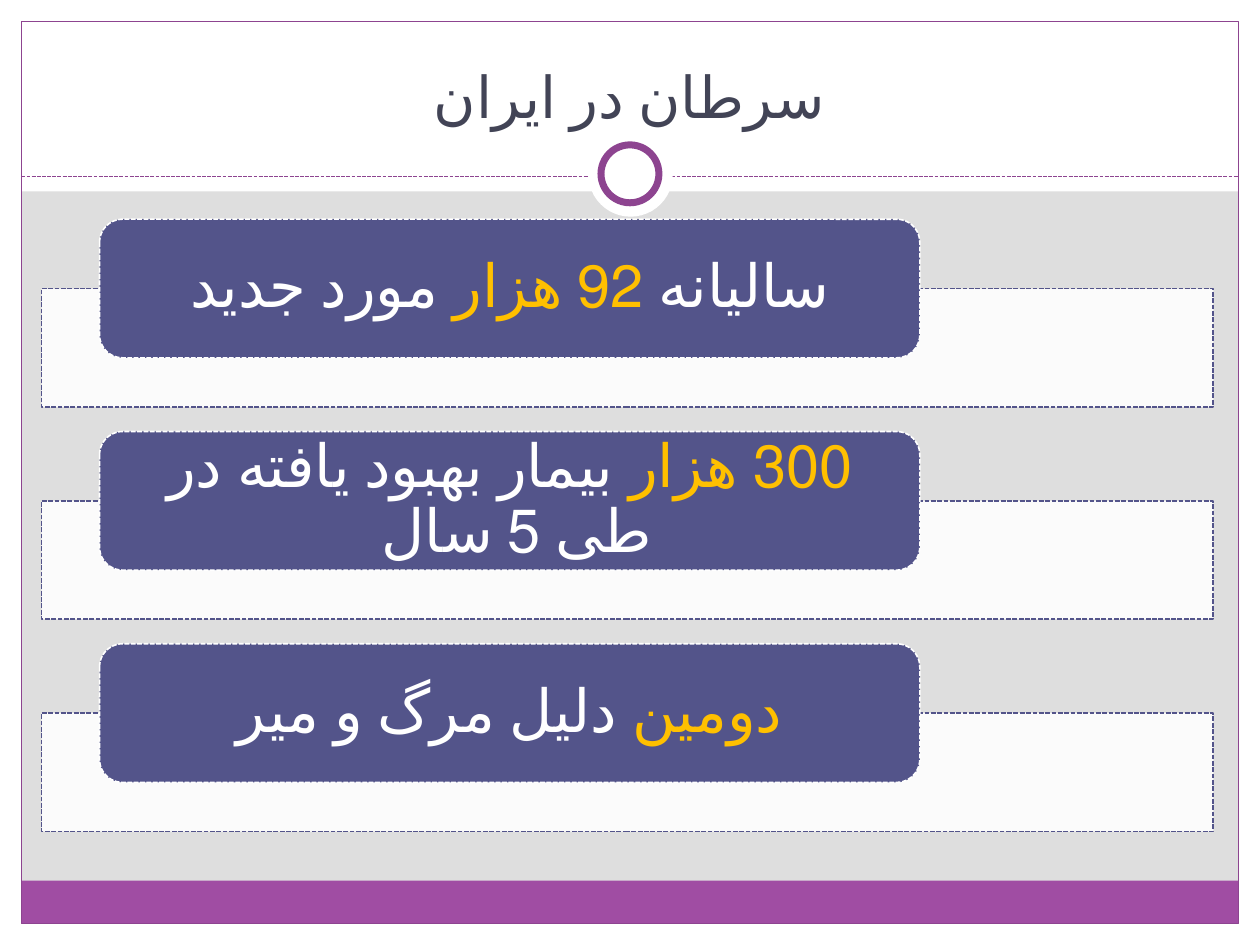
"""Build a slide with three statements about cancer in Iran."""
from pptx import Presentation
from pptx.dml.color import RGBColor
from pptx.enum.dml import MSO_LINE
from pptx.enum.lang import MSO_LANGUAGE_ID
from pptx.enum.shapes import MSO_CONNECTOR, MSO_SHAPE
from pptx.enum.text import MSO_ANCHOR, MSO_AUTO_SIZE, PP_ALIGN
from pptx.oxml.ns import qn
from pptx.util import Inches, Pt
from lxml import etree

RECTANGLE = MSO_SHAPE.RECTANGLE
ROUNDED = MSO_SHAPE.ROUNDED_RECTANGLE
OVAL = MSO_SHAPE.OVAL
STRAIGHT = MSO_CONNECTOR.STRAIGHT
DASH = MSO_LINE.SQUARE_DOT
CENTER = PP_ALIGN.CENTER
MIDDLE = MSO_ANCHOR.MIDDLE
BOTTOM = MSO_ANCHOR.BOTTOM
NO_AUTOFIT = MSO_AUTO_SIZE.NONE
PERSIAN = MSO_LANGUAGE_ID.FARSI

FONT = "TeX Gyre Schola"
WHITE, GREY, INDIGO, GOLD = "FFFFFF", "DEDEDE", "53548A", "FFC000"
PURPLE, DARK_PURPLE, TITLE_COLOR = "A04DA3", "8D4490", "424456"
FIRST_TOP, ROW_STEP = 1.74, 1.685
STATEMENTS = [
    ([("سالیانه ", WHITE), ("92 هزار ", GOLD), ("مورد جدید", WHITE)], True),
    ([("300 هزار ", GOLD), ("بیمار بهبود یافته در طی 5 سال ", WHITE)], True),
    ([("دومین", GOLD), (" دلیل مرگ و میر", WHITE)], False),
]


def color(value):
    """Turn a hex string into a colour."""
    return RGBColor.from_string(value)


def format_line(line, line_color, width, dash=None):
    """Set the colour, width and dash of a line."""
    line.color.rgb = color(line_color)
    line.width = Pt(width)
    if dash is not None:
        line.dash_style = dash


def add_box(slide, kind, box, fill=None, line=None, opacity=None):
    """Add a preset shape with optional fill, line and opacity percentage."""
    shape = slide.shapes.add_shape(kind, *map(Inches, box))
    shape.shadow.inherit = False
    if fill:
        shape.fill.solid()
        shape.fill.fore_color.rgb = color(fill)
    else:
        shape.fill.background()
    if opacity:
        fill_color = shape.fill._xPr.find(qn("a:solidFill"))[0]
        etree.SubElement(fill_color, qn("a:alpha")).set("val", str(opacity * 1000))
    if line:
        format_line(shape.line, *line)
    else:
        shape.line.fill.background()
    return shape


def add_rule(slide, start, end, line):
    """Add a straight line without a shadow."""
    connector = slide.shapes.add_connector(STRAIGHT, *map(Inches, start + end))
    format_line(connector.line, *line)
    etree.SubElement(connector._element.spPr, qn("a:effectLst"))


def write_text(shape, runs, size, anchor, inset=0.1, spacing=1.0, right_to_left=True):
    """Write one centred paragraph of coloured Persian runs."""
    frame = shape.text_frame
    frame.word_wrap = True
    frame.auto_size = NO_AUTOFIT
    frame.vertical_anchor = anchor
    frame.margin_left = frame.margin_right = Inches(inset)
    frame.margin_top = frame.margin_bottom = Inches(0.05)
    paragraph = frame.paragraphs[0]
    paragraph.alignment = CENTER
    paragraph.line_spacing = spacing
    if right_to_left:
        paragraph._p.get_or_add_pPr().set("rtl", "1")
    for text, run_color in runs:
        run = paragraph.add_run()
        run.text = text
        run.font.name = FONT
        run.font.size = Pt(size)
        run.font.language_id = PERSIAN
        run.font.color.rgb = color(run_color)


def add_frame(slide):
    """Draw the margins, footer band, border and header ring."""
    for box in [(0, 7.33, 10, 0.17), (0, 0, 10, 1.52),
                (0, 0, 0.17, 7.5), (9.83, 0, 0.17, 7.5)]:
        add_box(slide, RECTANGLE, box, WHITE)
    add_box(slide, RECTANGLE, (0.17, 6.99, 9.66, 0.34), PURPLE)
    add_box(slide, RECTANGLE, (0.17, 0.17, 9.66, 7.16), line=(DARK_PURPLE, 0.75))
    add_rule(slide, (0.17, 1.4), (9.83, 1.4), (DARK_PURPLE, 0.75, DASH))
    add_box(slide, OVAL, (4.67, 1.05, 0.67, 0.67), WHITE)
    add_box(slide, OVAL, (4.77, 1.15, 0.46, 0.46), WHITE, (DARK_PURPLE, 4))


def add_title(slide, text):
    """Place the title in front of the header."""
    title = slide.shapes.title
    title.left, title.top, title.width, title.height = map(
        Inches, (0.33, 0.25, 9.33, 0.83))
    write_text(title, [(text, TITLE_COLOR)], 33, BOTTOM)
    slide.shapes._spTree.append(title._element)


def add_statement(slide, top, runs, right_to_left):
    """Add a pale bar with a rounded label over it."""
    add_box(slide, RECTANGLE, (0.33, top + 0.55, 9.3, 0.94), WHITE,
            (INDIGO, 0.9, DASH), opacity=90)
    label = add_box(slide, ROUNDED, (0.79, top, 6.51, 1.1), INDIGO, (WHITE, 0.9, DASH))
    write_text(label, runs, 34, MIDDLE, inset=0.3, spacing=0.9,
               right_to_left=right_to_left)


def main():
    """Build and save the slide."""
    presentation = Presentation()
    presentation.slide_width, presentation.slide_height = Inches(10), Inches(7.5)
    slide = presentation.slides.add_slide(presentation.slide_layouts[5])
    slide.background.fill.solid()
    slide.background.fill.fore_color.rgb = color(GREY)
    add_frame(slide)
    add_title(slide, "سرطان در ایران")
    for index, (runs, right_to_left) in enumerate(STATEMENTS):
        add_statement(slide, FIRST_TOP + index * ROW_STEP, runs, right_to_left)
    presentation.save("out.pptx")


if __name__ == "__main__":
    main()
